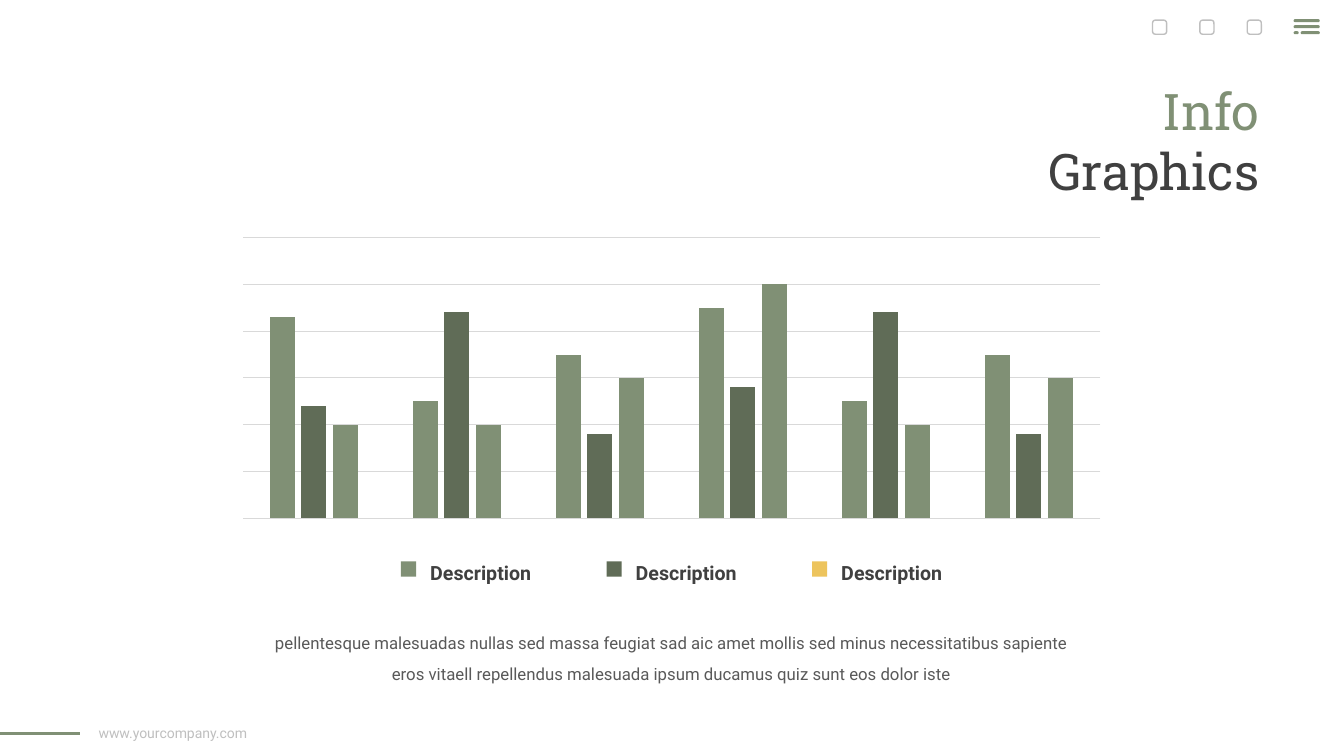
from dataclasses import dataclass

from lxml.etree import SubElement
from pptx import Presentation
from pptx.chart.data import CategoryChartData
from pptx.dml.color import RGBColor
from pptx.enum.chart import XL_CHART_TYPE as ChartType
from pptx.enum.shapes import MSO_CONNECTOR as Connector, MSO_SHAPE as Preset
from pptx.enum.text import MSO_AUTO_SIZE as AutoSize, PP_ALIGN as Align
from pptx.oxml.ns import qn
from pptx.slide import Slide
from pptx.util import Emu, Pt

PX = 9144
SAGE = RGBColor(0x80, 0x90, 0x75)
MOSS = RGBColor(0x60, 0x6C, 0x57)
GOLD = RGBColor(0xED, 0xC4, 0x5D)
DARK = RGBColor(0x40, 0x40, 0x40)
GREY = RGBColor(0x59, 0x59, 0x59)
SILVER = RGBColor(0xBF, 0xBF, 0xBF)
GRID = RGBColor(0xD9, 0xD9, 0xD9)
BLACK = RGBColor(0, 0, 0)


@dataclass(frozen=True)
class Box:
    left: int
    top: int
    width: int
    height: int

    def emu(self) -> tuple[Emu, ...]:
        return tuple(Emu(n * PX) for n in (self.left, self.top, self.width, self.height))


@dataclass(frozen=True)
class Line:
    words: str
    color: RGBColor


@dataclass(frozen=True)
class Label:
    box: Box
    lines: tuple[Line, ...]
    size: int
    font: str = "Roboto"
    bold: bool = False
    wrap: bool = False
    align: Align = Align.LEFT
    spacing: float = 1.0


@dataclass(frozen=True)
class Series:
    name: str
    values: tuple[int, ...]
    color: RGBColor


@dataclass(frozen=True)
class Key:
    words: str
    color: RGBColor


SERIES = (
    Series("Series 1", (86, 50, 70, 90, 50, 70), SAGE),
    Series("Series 2", (48, 88, 36, 56, 88, 36), MOSS),
    Series("Series 3", (40, 40, 60, 100, 40, 60), SAGE),
)
KEYS = tuple(Key("Description", color) for color in (SAGE, MOSS, GOLD))
KEY_LEFT, KEY_STEP = 398, 204
ICON_LEFT, ICON_STEP, ICON_COUNT = 1144, 47, 3
MENU_BARS = (Box(1284, 19, 26, 3), Box(1284, 25, 26, 3), Box(1284, 31, 5, 3), Box(1291, 31, 19, 3))
LABELS = (
    Label(
        Box(269, 618, 795, 57),
        (Line("pellentesque malesuadas nullas sed massa feugiat sad aic amet mollis sed minus "
              "necessitatibus sapiente eros vitaell repellendus malesuada ipsum ducamus quiz "
              "sunt eos dolor iste", GREY),),
        12, wrap=True, align=Align.CENTER, spacing=1.5),
    Label(
        Box(1032, 79, 218, 121), (Line("Info", SAGE), Line("Graphics", DARK)),
        36, font="Roboto Slab", align=Align.RIGHT),
    Label(Box(94, 719, 155, 17), (Line("www.yourcompany.com", SILVER),), 10, align=Align.CENTER),
)


def apply(target: object, formats: dict[str, object]) -> None:
    """Set every format value on the target."""
    for attribute, value in formats.items():
        setattr(target, attribute, value)


def add_label(slide: Slide, label: Label) -> None:
    """Write a text box with one paragraph per line."""
    frame = slide.shapes.add_textbox(*label.box.emu()).text_frame
    apply(frame, {
        "margin_left": 0, "margin_top": 0, "margin_right": 0, "margin_bottom": 0,
        "word_wrap": label.wrap, "auto_size": AutoSize.SHAPE_TO_FIT_TEXT,
    })
    for index, line in enumerate(label.lines):
        paragraph = frame.add_paragraph() if index else frame.paragraphs[0]
        apply(paragraph, {"alignment": label.align, "line_spacing": label.spacing})
        run = paragraph.add_run()
        run.text = line.words
        apply(run.font, {"name": label.font, "size": Pt(label.size), "bold": label.bold})
        run.font.color.rgb = line.color


def add_block(slide: Slide, preset: Preset, box: Box, color: RGBColor, outlined: bool = False) -> None:
    """Draw a preset shape, either filled or outlined."""
    block = slide.shapes.add_shape(preset, *box.emu())
    block.shadow.inherit = False
    if outlined:
        block.fill.background()
        block.line.color.rgb = color
        block.line.width = Pt(1)
    else:
        block.fill.solid()
        block.fill.fore_color.rgb = color
        block.line.fill.background()
    if preset == Preset.ROUNDED_RECTANGLE:
        block.adjustments[0] = 0.2 if outlined else 0.5


def add_columns(slide: Slide, box: Box) -> None:
    """Draw the clustered columns over light gridlines."""
    data = CategoryChartData()
    data.categories = [str(number) for number in range(1, 7)]
    for series in SERIES:
        data.add_series(series.name, series.values)
    chart = slide.shapes.add_chart(ChartType.COLUMN_CLUSTERED, *box.emu(), data).chart
    apply(chart, {"has_legend": False, "has_title": False})
    apply(chart.font, {"name": "Roboto", "size": Pt(10)})
    chart.font.color.rgb = BLACK
    apply(chart.category_axis, {"visible": False, "has_major_gridlines": False})
    apply(chart.value_axis, {
        "visible": False, "has_major_gridlines": True,
        "minimum_scale": 0, "maximum_scale": 120, "major_unit": 20,
    })
    gridlines = chart.value_axis.major_gridlines.format.line
    gridlines.color.rgb = GRID
    gridlines.width = Pt(0.75)
    plot = chart.plots[0]
    apply(plot, {"gap_width": 219, "overlap": -27, "vary_by_categories": False})
    for columns, series in zip(plot.series, SERIES):
        columns.format.fill.solid()
        columns.format.fill.fore_color.rgb = series.color


def add_footer_rule(slide: Slide) -> None:
    """Draw the short rule beside the web address."""
    ends = (Emu(n * PX) for n in (0, 728, 79, 728))
    rule = slide.shapes.add_connector(Connector.STRAIGHT, *ends)
    rule.line.color.rgb = SAGE
    rule.line.width = Pt(2)
    SubElement(rule.element.spPr, qn("a:effectLst"))


def main() -> None:
    """Build the infographic slide and save it."""
    deck = Presentation()
    apply(deck, {"slide_width": Emu(1334 * PX), "slide_height": Emu(750 * PX)})
    slide = deck.slides.add_slide(deck.slide_layouts[6])
    add_columns(slide, Box(223, 230, 887, 290))
    for index, key in enumerate(KEYS):
        left = KEY_LEFT + index * KEY_STEP
        add_label(slide, Label(Box(left + 29, 545, 111, 32), (Line(key.words, DARK),),
                               14, bold=True, spacing=1.5))
        add_block(slide, Preset.RECTANGLE, Box(left, 557, 15, 15), key.color)
    for label in LABELS:
        add_label(slide, label)
    add_footer_rule(slide)
    for bar in MENU_BARS:
        add_block(slide, Preset.ROUNDED_RECTANGLE, bar, SAGE)
    for index in range(ICON_COUNT):
        icon = Box(ICON_LEFT + index * ICON_STEP, 20, 14, 14)
        add_block(slide, Preset.ROUNDED_RECTANGLE, icon, SILVER, outlined=True)
    deck.save("out.pptx")


if __name__ == "__main__":
    main()
